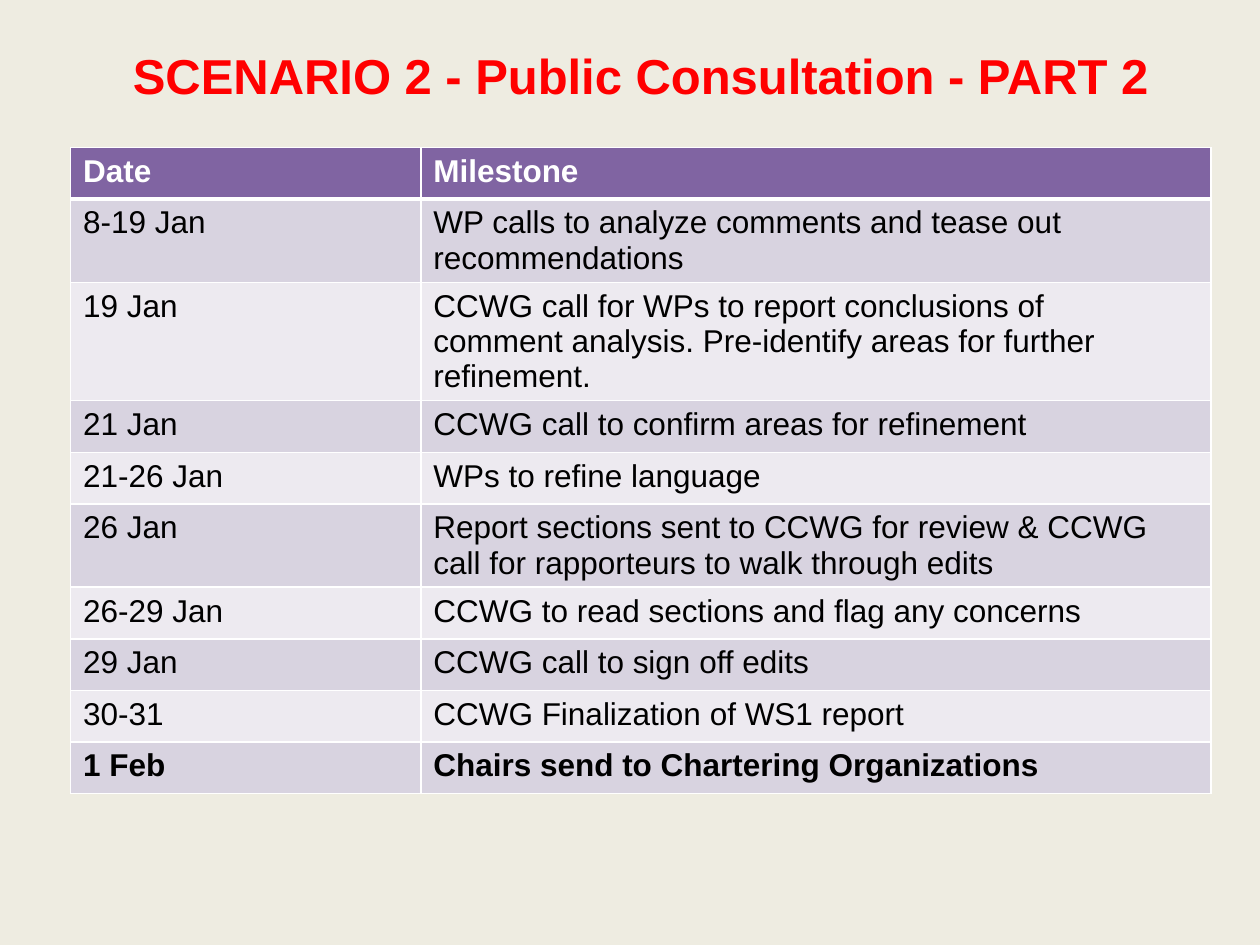
from dataclasses import dataclass

from pptx import Presentation
from pptx.dml.color import RGBColor
from pptx.enum.text import MSO_ANCHOR, MSO_AUTO_SIZE, PP_ALIGN
from pptx.oxml import parse_xml
from pptx.oxml.ns import nsdecls
from pptx.util import Inches, Pt


@dataclass(frozen=True)
class Theme:
    font: str = "Arial"
    title_size: int = 28
    table_size: int = 18
    background: str = "EEECE1"
    title: str = "FF0000"
    header_fill: str = "8064A2"
    header_text: str = "FFFFFF"
    body_text: str = "000000"
    bands: tuple[str, str] = ("D8D3E0", "EDEAF0")
    border: str = "FFFFFF"
    border_width: int = 1
    header_rule_width: int = 3


@dataclass(frozen=True)
class Milestone:
    date: str
    description: str
    bold: bool = False


THEME = Theme()
NO_BREAK = chr(160)
LEFT, WIDTH = 0.56, 9.05
TABLE_TOP, ROW_HEIGHT = 1.17, 0.41
COLUMN_WIDTHS = (2.78, 6.27)
HEADER = Milestone("Date", "Milestone", bold=True)
MILESTONES = (
    Milestone("8-19 Jan", "WP calls to analyze comments and tease out recommendations"),
    Milestone(
        "19 Jan",
        f"CCWG call for{NO_BREAK}WPs to report conclusions of "
        f"comment{NO_BREAK}analysis. Pre-identify areas for further refinement.",
    ),
    Milestone("21 Jan", "CCWG call to confirm areas for refinement"),
    Milestone("21-26 Jan", "WPs to refine language"),
    Milestone(
        "26 Jan",
        "Report sections sent to CCWG for review & CCWG call for rapporteurs "
        "to walk through edits",
    ),
    Milestone("26-29 Jan", "CCWG to read sections and flag any concerns"),
    Milestone("29 Jan", "CCWG call to sign off edits"),
    Milestone("30-31", "CCWG Finalization of WS1 report"),
    Milestone("1 Feb", "Chairs send to Chartering Organizations", bold=True),
)


def set_text(text_frame, text: str, size: int, color: str, bold: bool) -> None:
    text_frame.text = text
    font = text_frame.paragraphs[0].runs[0].font
    font.name = THEME.font
    font.size = Pt(size)
    font.bold = bold
    font.color.rgb = RGBColor.from_string(color)


def set_borders(cell, top: int, bottom: int) -> None:
    """Put the four cell borders ahead of the fill, as the schema requires."""
    side = THEME.border_width
    widths = {"lnL": side, "lnR": side, "lnT": top, "lnB": bottom}
    properties = cell._tc.get_or_add_tcPr()
    for index, (tag, width) in enumerate(widths.items()):
        line = parse_xml(
            f'<a:{tag} {nsdecls("a")} w="{Pt(width)}"><a:solidFill>'
            f'<a:srgbClr val="{THEME.border}"/></a:solidFill></a:{tag}>'
        )
        properties.insert(index, line)


def add_title(slide, text: str) -> None:
    title = slide.shapes.title
    title.left, title.top = Inches(LEFT), Inches(0.31)
    title.width, title.height = Inches(WIDTH), Inches(0.86)
    text_frame = title.text_frame
    set_text(text_frame, text, THEME.title_size, THEME.title, bold=True)
    text_frame.word_wrap = True
    text_frame.auto_size = MSO_AUTO_SIZE.NONE
    text_frame.vertical_anchor = MSO_ANCHOR.TOP
    text_frame.paragraphs[0].alignment = PP_ALIGN.CENTER


def add_schedule(slide, milestones: tuple[Milestone, ...]) -> None:
    rows = (HEADER, *milestones)
    table = slide.shapes.add_table(
        len(rows), len(COLUMN_WIDTHS), Inches(LEFT), Inches(TABLE_TOP),
        Inches(WIDTH), Inches(ROW_HEIGHT * len(rows)),
    ).table
    for column, width in zip(table.columns, COLUMN_WIDTHS):
        column.width = Inches(width)

    for index, milestone in enumerate(rows):
        table.rows[index].height = Inches(ROW_HEIGHT)
        is_header = index == 0
        fill = THEME.header_fill if is_header else THEME.bands[(index - 1) % 2]
        color = THEME.header_text if is_header else THEME.body_text
        top = THEME.header_rule_width if index == 1 else THEME.border_width
        bottom = THEME.header_rule_width if is_header else THEME.border_width
        texts = (milestone.date, milestone.description)
        for cell, text in zip(table.rows[index].cells, texts):
            set_text(cell.text_frame, text, THEME.table_size, color, milestone.bold)
            cell.fill.solid()
            cell.fill.fore_color.rgb = RGBColor.from_string(fill)
            set_borders(cell, top, bottom)


def main() -> None:
    presentation = Presentation()
    presentation.slide_width, presentation.slide_height = Inches(10), Inches(7.5)
    slide = presentation.slides.add_slide(presentation.slide_layouts.get_by_name("Title Only"))
    slide.background.fill.solid()
    slide.background.fill.fore_color.rgb = RGBColor.from_string(THEME.background)
    add_title(slide, "SCENARIO 2 - Public Consultation - PART 2")
    add_schedule(slide, MILESTONES)
    presentation.save("out.pptx")


if __name__ == "__main__":
    main()
